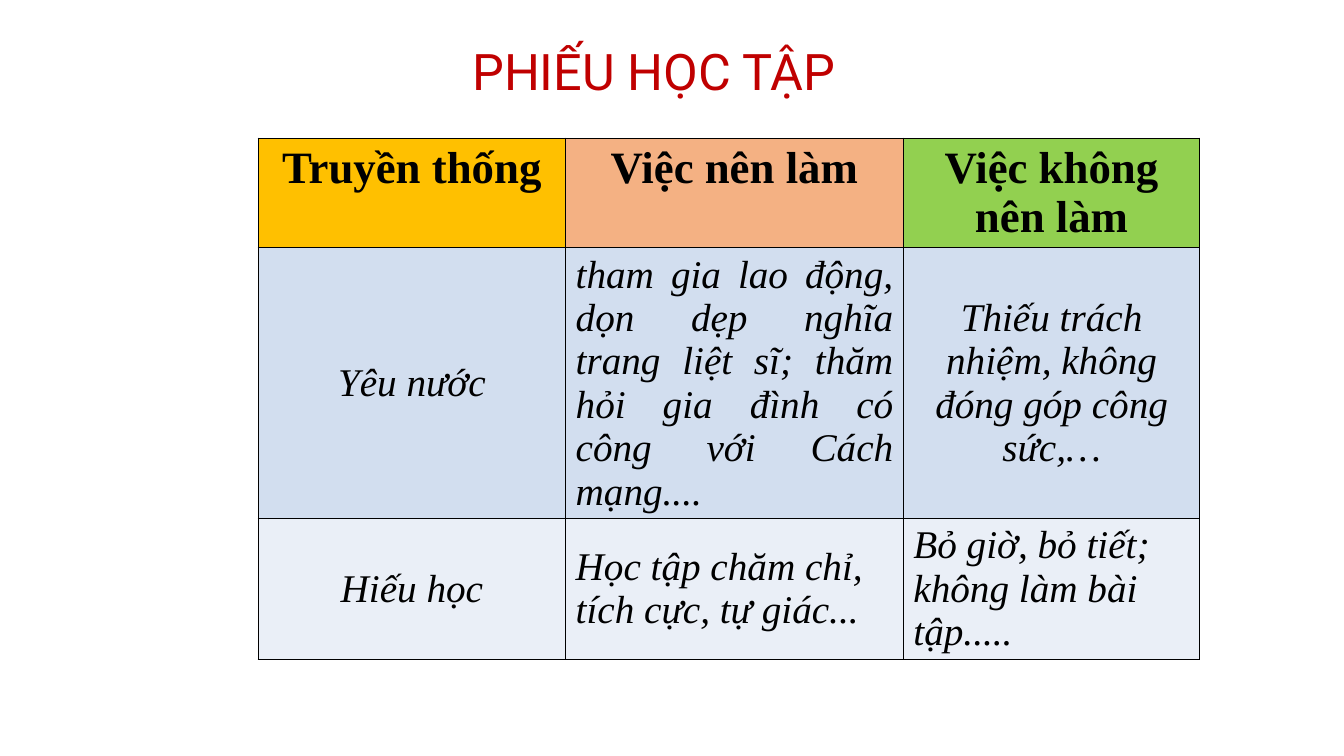
from lxml.etree import SubElement
from pptx import Presentation
from pptx.dml.color import RGBColor
from pptx.enum.text import MSO_ANCHOR, PP_ALIGN
from pptx.oxml.ns import qn
from pptx.util import Inches, Pt

BLACK = RGBColor(0x00, 0x00, 0x00)
RED = RGBColor(0xC0, 0x00, 0x00)
GOLD = RGBColor(0xFF, 0xC0, 0x00)
PEACH = RGBColor(0xF4, 0xB1, 0x83)
GREEN = RGBColor(0x92, 0xD0, 0x50)
BLUE = RGBColor(0xD2, 0xDE, 0xEF)
PALE = RGBColor(0xEA, 0xEF, 0xF7)

TITLE_FONT = {"name": "Roboto", "size": Pt(36)}
HEADER_FONT = {"name": "Times New Roman", "size": Pt(32), "bold": True, "italic": False}
BODY_FONT = {"name": "Times New Roman", "size": Pt(28), "bold": False, "italic": True}

COLUMN_WIDTHS = (3.05, 3.35, 2.94)
LEFT, CENTER, JUSTIFY = PP_ALIGN.LEFT, PP_ALIGN.CENTER, PP_ALIGN.JUSTIFY
TOP, MIDDLE = MSO_ANCHOR.TOP, MSO_ANCHOR.MIDDLE

ROWS = [
    (1.08, HEADER_FONT, TOP, [
        ("Truyền thống", CENTER, GOLD),
        ("Việc nên làm", CENTER, PEACH),
        ("Việc không nên làm", CENTER, GREEN)]),
    (2.69, BODY_FONT, MIDDLE, [
        ("Yêu nước", CENTER, BLUE),
        ("tham gia lao động, dọn dẹp nghĩa trang liệt sĩ; thăm hỏi gia đình có công với Cách mạng....",
         JUSTIFY, BLUE),
        ("Thiếu trách nhiệm, không đóng góp công sức,…", CENTER, BLUE)]),
    (1.39, BODY_FONT, MIDDLE, [
        ("Hiếu học", CENTER, PALE),
        ("Học tập chăm chỉ, tích cực, tự giác...", LEFT, PALE),
        ("Bỏ giờ, bỏ tiết; không làm bài tập.....", LEFT, PALE)]),
]


def write(frame, text, align, color, formats):
    """Put one formatted paragraph into a text frame."""
    para = frame.paragraphs[0]
    para.alignment = align
    span = para.add_run()
    span.text = text
    span.font.color.rgb = color
    for name, value in formats.items():
        setattr(span.font, name, value)


def add_borders(cell, color, width):
    """Draw a solid line on all four sides of a cell."""
    properties = cell._tc.get_or_add_tcPr()
    for side in ("a:lnL", "a:lnR", "a:lnT", "a:lnB"):
        line = SubElement(properties, qn(side), w=str(width))
        fill = SubElement(line, qn("a:solidFill"))
        SubElement(fill, qn("a:srgbClr"), val=str(color))


def add_title(page, left, top, width, height):
    """Place the centred worksheet title in its box."""
    box = page.shapes.add_textbox(*map(Inches, (left, top, width, height)))
    box.text_frame.word_wrap = True
    write(box.text_frame, "PHIẾU HỌC TẬP", CENTER, RED, TITLE_FONT)


def add_worksheet(page, left, top):
    """Place the table of traditions with its corner at the given point."""
    width, height = sum(COLUMN_WIDTHS), sum(row[0] for row in ROWS)
    table = page.shapes.add_table(
        len(ROWS), len(COLUMN_WIDTHS), *map(Inches, (left, top, width, height))).table
    for column, column_width in zip(table.columns, COLUMN_WIDTHS):
        column.width = Inches(column_width)
    for row, (row_height, formats, anchor, entries) in zip(table.rows, ROWS):
        row.height = Inches(row_height)
        for cell, (text, align, color) in zip(row.cells, entries):
            add_borders(cell, BLACK, Pt(1))
            cell.fill.solid()
            cell.fill.fore_color.rgb = color
            cell.vertical_anchor = anchor
            write(cell.text_frame, text, align, BLACK, formats)


def main():
    """Build the worksheet slide and save the deck."""
    deck = Presentation()
    deck.slide_width, deck.slide_height = Inches(13.33), Inches(7.5)
    page = deck.slides.add_slide(deck.slide_layouts[6])
    add_worksheet(page, 2.56, 1.37)
    add_title(page, 3.41, 0.35, 6.15, 0.71)
    deck.save("out.pptx")


if __name__ == "__main__":
    main()
